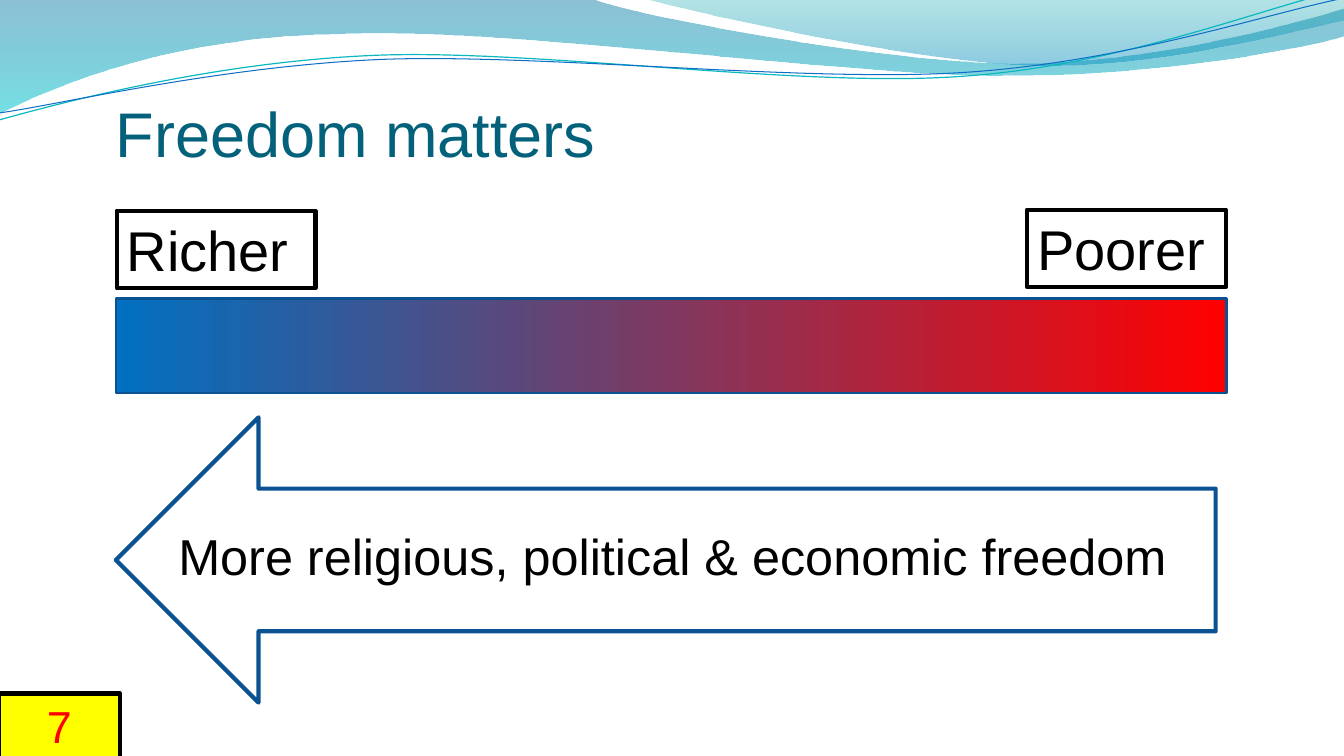
"""Build the "Freedom matters" slide."""
from dataclasses import dataclass
from typing import Optional

from lxml import etree
from pptx import Presentation
from pptx import util as u
from pptx.dml.color import RGBColor
from pptx.enum import shapes, text
from pptx.oxml.ns import qn

PX = 9144
SLIDE_WIDTH = u.Emu(12192000)
FONT = "Arial"

BLACK = RGBColor(0x00, 0x00, 0x00)
RED = RGBColor(0xFF, 0x00, 0x00)
YELLOW = RGBColor(0xFF, 0xFF, 0x00)
BLUE = RGBColor(0x00, 0x70, 0xC0)
NAVY = RGBColor(0x0B, 0x52, 0x92)
TITLE_TEAL = RGBColor(0x04, 0x61, 0x7B)
DEEP_BLUE = RGBColor(0x00, 0x74, 0xA1)
TURQUOISE = RGBColor(0x00, 0xC6, 0xCF)
SEA_GREEN = RGBColor(0x00, 0xA1, 0xA9)
SKY_BLUE = RGBColor(0x00, 0x8B, 0xBF)
LINE_TEAL = RGBColor(0x0A, 0xB8, 0xBF)
LINE_BLUE = RGBColor(0x0F, 0x6F, 0xC6)


@dataclass(frozen=True)
class Gradient:
    """Two colours with opacity in percent and a clockwise angle."""
    start: RGBColor
    end: RGBColor
    angle: int
    opacity: tuple = (100, 100)


@dataclass(frozen=True)
class Wave:
    """An outline whose steps are lines (x, y) or cubic curves (6 values)."""
    start: tuple
    steps: tuple
    gradient: Optional[Gradient] = None
    line: Optional[RGBColor] = None
    weight: float = 0


@dataclass(frozen=True)
class Label:
    """A text box with an optional frame and fill."""
    words: str
    box: tuple
    size: int
    color: RGBColor = BLACK
    framed: bool = True
    fill: Optional[RGBColor] = None
    align: text.PP_ALIGN = text.PP_ALIGN.LEFT


WAVES = (
    Wave((0, 0), ((587, -1), (634, 17, 885, 63, 1011, 63),
                  (1138, 63, 1278, 26, 1333, 9), (1335, 36),
                  (1311, 44, 1160, 76, 994, 75), (829, 75, 509, 28, 343, 34),
                  (172, 36, 61, 83, -1, 113)),
         Gradient(DEEP_BLUE, TURQUOISE, 90, (45, 55))),
    Wave((639, -1), ((679, 11, 909, 62, 1025, 65),
                     (1141, 69, 1282, 32, 1333, 21), (1333, 0)),
         Gradient(SEA_GREEN, SKY_BLUE, 90, (30, 45))),
    Wave((-1, 119), ((64, 101, 211, 62, 369, 55), (527, 48, 790, 87, 950, 76),
                     (1110, 66, 1252, 8, 1331, -10)),
         line=LINE_TEAL, weight=0.85),
    Wave((0, 112), ((63, 103, 218, 66, 378, 59), (537, 53, 796, 82, 955, 72),
                    (1115, 62, 1255, 14, 1334, -2)),
         line=LINE_BLUE, weight=0.75),
)

LABELS = (
    Label("Richer", (116, 209, 197, 77), 40),
    Label("Poorer", (1019, 208, 197, 77), 40),
    Label("More religious, political & economic freedom",
          (167, 516, 1135, 71), 36, framed=False),
    Label("7", (-1, 688, 120, 64), 32, RED, fill=YELLOW,
          align=text.PP_ALIGN.CENTER),
)


def emu(box: tuple) -> list:
    """Turn px lengths into EMU."""
    return [u.Emu(v * PX) for v in box]


def bend(sp, steps: tuple) -> None:
    """Join the three lines of each curved step into one cubic curve."""
    lines = iter(list(sp.element.iter(qn("a:lnTo"))))
    for step in steps:
        first = next(lines)
        if len(step) == 6:
            first.tag = qn("a:cubicBezTo")
            for _ in range(2):
                extra = next(lines)
                first.append(extra[0])
                extra.getparent().remove(extra)


def set_gradient(sp, gradient: Gradient) -> None:
    """Fill a shape with a linear gradient."""
    sp.fill.gradient()
    sp.fill.gradient_angle = 360 - gradient.angle
    for stop, color in zip(sp.fill.gradient_stops, (gradient.start, gradient.end)):
        stop.color.rgb = color
    for clr, opacity in zip(sp.element.spPr.iter(qn("a:srgbClr")), gradient.opacity):
        if opacity < 100:
            etree.SubElement(clr, qn("a:alpha")).set("val", str(opacity * 1000))


def set_line(sp, color: Optional[RGBColor], weight: float) -> None:
    """Draw the outline of a shape, or remove it."""
    if color is None:
        sp.line.fill.background()
        return
    sp.line.color.rgb = color
    sp.line.width = u.Pt(weight)


def add_run(p, words: str, size: int, color: RGBColor) -> None:
    """Add one formatted run to a paragraph."""
    r = p.add_run()
    r.text = words
    r.font.name = FONT
    r.font.size = u.Pt(size)
    r.font.color.rgb = color


def add_wave(s, wave: Wave) -> None:
    """Draw one wave of the header."""
    points = [step[i:i + 2] for step in wave.steps for i in range(0, len(step), 2)]
    builder = s.shapes.build_freeform(*wave.start, scale=PX)
    builder.add_line_segments(points, close=wave.gradient is not None)
    sp = builder.convert_to_shape()
    bend(sp, wave.steps)
    sp.shadow.inherit = False
    if wave.gradient:
        set_gradient(sp, wave.gradient)
    else:
        sp.fill.background()
    set_line(sp, wave.line, wave.weight)


def add_title(s, words: str) -> None:
    """Place the title above the header waves."""
    title = s.shapes.title
    s.shapes.element.append(title.element)
    title.left, title.top, title.width, title.height = emu((115, 92, 1102, 77))
    tf = title.text_frame
    tf.auto_size = text.MSO_AUTO_SIZE.NONE
    tf.vertical_anchor = text.MSO_ANCHOR.BOTTOM
    tf.margin_left = tf.margin_right = tf.margin_bottom = 0
    tf.margin_top = u.Inches(0.05)
    p = tf.paragraphs[0]
    p.alignment = text.PP_ALIGN.LEFT
    add_run(p, words, 45, TITLE_TEAL)


def add_label(s, label: Label) -> None:
    """Draw one text box."""
    sp = s.shapes.add_textbox(*emu(label.box))
    if label.fill is not None:
        sp.fill.solid()
        sp.fill.fore_color.rgb = label.fill
    if label.framed:
        set_line(sp, BLACK, 3)
    tf = sp.text_frame
    tf.word_wrap = True
    tf.auto_size = text.MSO_AUTO_SIZE.SHAPE_TO_FIT_TEXT
    p = tf.paragraphs[0]
    p.alignment = label.align
    add_run(p, label.words, label.size, label.color)


def main() -> None:
    """Build and save the slide."""
    prs = Presentation()
    prs.slide_width, prs.slide_height = SLIDE_WIDTH, u.Emu(750 * PX)
    s = prs.slides.add_slide(prs.slide_layouts[5])
    for wave in WAVES:
        add_wave(s, wave)
    add_title(s, "Freedom matters")

    kind = shapes.MSO_SHAPE
    bar = s.shapes.add_shape(kind.RECTANGLE, *emu((115, 296, 1102, 94)))
    bar.shadow.inherit = False
    set_gradient(bar, Gradient(RED, BLUE, 180))
    set_line(bar, NAVY, 2)

    arrow = s.shapes.add_shape(kind.RIGHT_ARROW, *emu((115, 414, 1091, 283)))
    arrow.shadow.inherit = False
    arrow.rotation = 180
    arrow.fill.background()
    set_line(arrow, NAVY, 3)

    for label in LABELS:
        add_label(s, label)
    prs.save("out.pptx")


if __name__ == "__main__":
    main()
